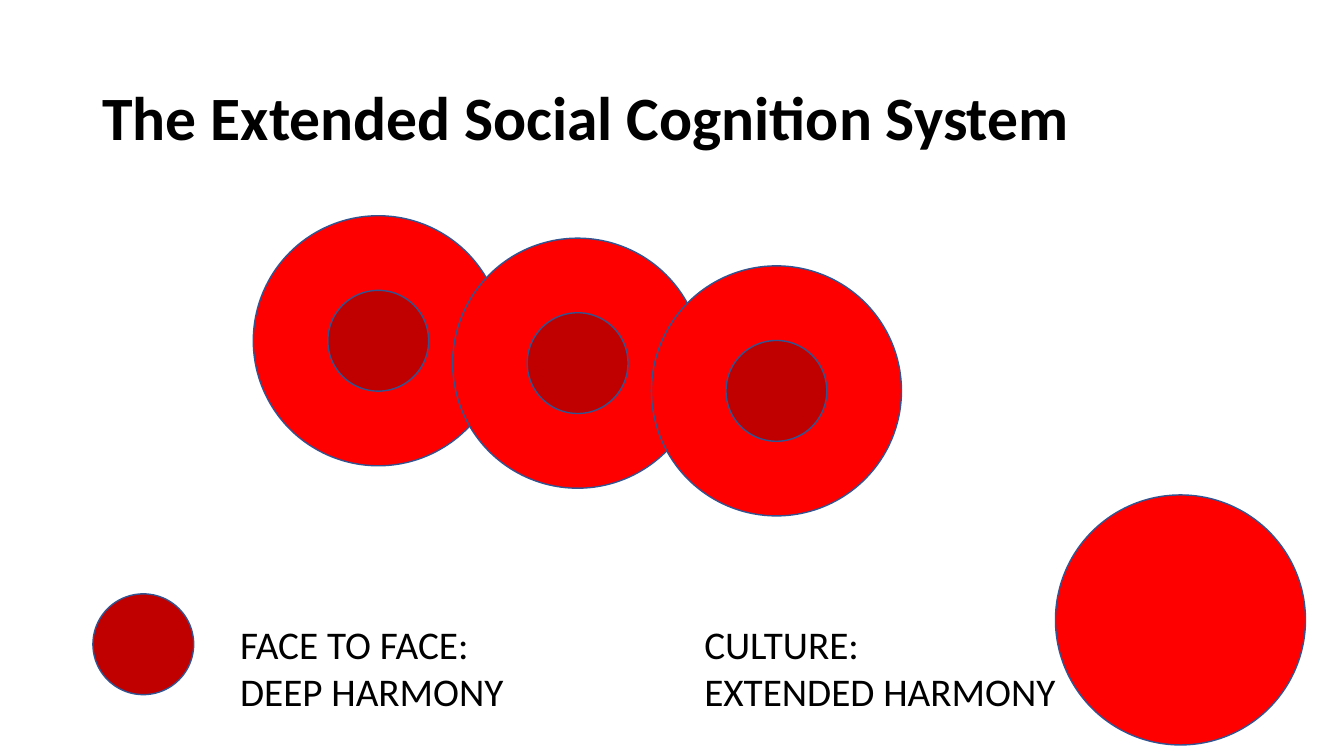
from pptx import Presentation
from pptx.dml.color import RGBColor
from pptx.enum.shapes import MSO_SHAPE
from pptx.enum.text import MSO_ANCHOR, MSO_AUTO_SIZE, PP_ALIGN
from pptx.util import Pt

OVAL = MSO_SHAPE.OVAL
MIDDLE = MSO_ANCHOR.MIDDLE
LEFT = PP_ALIGN.LEFT
FIT_SHAPE = MSO_AUTO_SIZE.SHAPE_TO_FIT_TEXT
NO_FIT = MSO_AUTO_SIZE.NONE

BLACK = RGBColor(0x00, 0x00, 0x00)
RED = RGBColor(0xFF, 0x00, 0x00)
DARK_RED = RGBColor(0xC0, 0x00, 0x00)
OUTLINE = RGBColor(0x32, 0x54, 0x91)

FONT = "Calibri"
CULTURE_SIZE = 178.6
FACE_SIZE = 72
PERSON_CENTRES = [(270.2, 243.4), (412.6, 259.4), (554.6, 279.2)]


def add_run(paragraph, text, size, bold=False):
    """Add one formatted run to a paragraph."""
    run = paragraph.add_run()
    run.text = text
    run.font.name = FONT
    run.font.size = Pt(size)
    run.font.bold = bold
    run.font.color.rgb = BLACK


def set_title(slide, text):
    """Place and fill the title placeholder."""
    title = slide.shapes.title
    title.left, title.top = Pt(66), Pt(33.8)
    title.width, title.height = Pt(828), Pt(104.4)
    frame = title.text_frame
    frame.vertical_anchor = MIDDLE
    frame.auto_size = NO_FIT
    paragraph = frame.paragraphs[0]
    paragraph.alignment = LEFT
    paragraph.line_spacing = 0.9
    add_run(paragraph, text, 44, bold=True)


def add_circle(shapes, centre_x, centre_y, diameter, color):
    """Draw an outlined circle around a centre."""
    radius = diameter / 2
    circle = shapes.add_shape(OVAL, Pt(centre_x - radius), Pt(centre_y - radius),
                              Pt(diameter), Pt(diameter))
    circle.shadow.inherit = False
    circle.fill.solid()
    circle.fill.fore_color.rgb = color
    circle.line.color.rgb = OUTLINE
    circle.line.width = Pt(1)


def add_person(slide, centre_x, centre_y):
    """Group a face-to-face core inside its culture circle."""
    person = slide.shapes.add_group_shape()
    add_circle(person.shapes, centre_x, centre_y, CULTURE_SIZE, RED)
    add_circle(person.shapes, centre_x, centre_y, FACE_SIZE, DARK_RED)


def add_label(slide, left, width, lines):
    """Write a legend label, one paragraph per line."""
    label = slide.shapes.add_textbox(Pt(left), Pt(439.2), Pt(width), Pt(75))
    frame = label.text_frame
    frame.word_wrap = False
    frame.auto_size = FIT_SHAPE
    for index, line in enumerate(lines):
        paragraph = frame.add_paragraph() if index else frame.paragraphs[0]
        add_run(paragraph, line, 28)


def main():
    """Build and save the slide."""
    deck = Presentation()
    deck.slide_width, deck.slide_height = Pt(960), Pt(540)
    slide = deck.slides.add_slide(deck.slide_layouts[5])
    set_title(slide, "The Extended Social Cognition System")
    add_circle(slide.shapes, 102.4, 460.2, FACE_SIZE, DARK_RED)
    add_label(slide, 164.4, 211.6, ["FACE TO FACE:", "DEEP HARMONY"])
    for centre_x, centre_y in PERSON_CENTRES:
        add_person(slide, centre_x, centre_y)
    add_circle(slide.shapes, 843.2, 442.8, CULTURE_SIZE, RED)
    add_label(slide, 496, 268.6, ["CULTURE:", "EXTENDED HARMONY"])
    deck.save("out.pptx")


if __name__ == "__main__":
    main()
